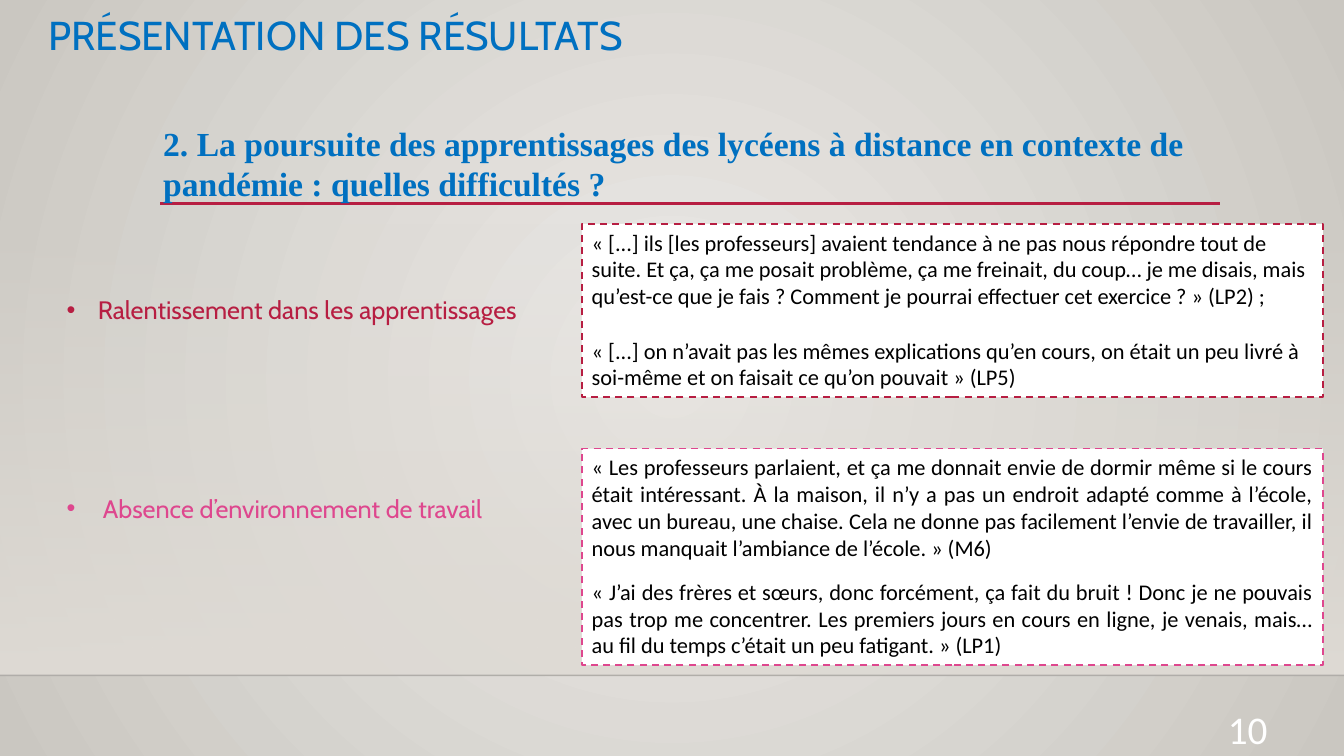
from lxml import etree
from pptx import Presentation
from pptx.dml.color import RGBColor
from pptx.enum.dml import MSO_LINE
from pptx.enum.shapes import MSO_CONNECTOR, MSO_SHAPE
from pptx.enum.text import MSO_ANCHOR, MSO_AUTO_SIZE, PP_ALIGN
from pptx.oxml import parse_xml
from pptx.oxml.ns import qn
from pptx.util import Inches, Pt

LEFT, RIGHT, JUST = PP_ALIGN.LEFT, PP_ALIGN.RIGHT, PP_ALIGN.JUSTIFY
TOP, NONE, DASH = MSO_ANCHOR.TOP, MSO_AUTO_SIZE.NONE, MSO_LINE.DASH
RECT, STRAIGHT = MSO_SHAPE.RECTANGLE, MSO_CONNECTOR.STRAIGHT

BLUE = RGBColor(0x00, 0x70, 0xC0)
RED = RGBColor(0xB7, 0x1E, 0x42)
PINK = RGBColor(0xDE, 0x47, 0x8E)
WHITE = RGBColor(0xFF, 0xFF, 0xFF)
BLACK = RGBColor(0, 0, 0)
INK = RGBColor(0, 0, 1)
PALE = RGBColor(0xEC, 0xEA, 0xE7)
GREY = RGBColor(0xCA, 0xC7, 0xC1)
SAND = RGBColor(0xDF, 0xDB, 0xD5)

# Content
TITLE = "PRÉSENTATION DES RÉSULTATS"
HEAD = ("2. La poursuite des apprentissages des lycéens à distance en contexte "
        "de pandémie : quelles difficultés ?")
PAGE = "10"
# Each theme: label, colour, label top, label indent,
# quote top, quote height, alignment, paragraph gap, quotes
THEMES = [
    ("Ralentissement dans les apprentissages", RED, 2.87, 0.31,
     2.22, 1.72, LEFT, 19.5, [
         "« [...] ils [les professeurs] avaient tendance à ne pas nous répondre "
         "tout de suite. Et ça, ça me posait problème, ça me freinait, du coup… "
         "je me disais, mais qu’est-ce que je fais ? Comment je pourrai "
         "effectuer cet exercice ? » (LP2) ;",
         "« [...] on n’avait pas les mêmes explications qu’en cours, on était un "
         "peu livré à soi-même et on faisait ce qu’on pouvait » (LP5)"]),
    ("Absence d’environnement de travail", PINK, 4.84, 0.36,
     4.45, 2.15, JUST, 12, [
         "« Les professeurs parlaient, et ça me donnait envie de dormir même si "
         "le cours était intéressant. À la maison, il n’y a pas un endroit "
         "adapté comme à l’école, avec un bureau, une chaise. Cela ne donne pas "
         "facilement l’envie de travailler, il nous manquait l’ambiance de "
         "l’école. » (M6)",
         "« J’ai des frères et sœurs, donc forcément, ça fait du bruit ! Donc "
         "je ne pouvais pas trop me concentrer. Les premiers jours en cours en "
         "ligne, je venais, mais… au fil du temps c’était un peu fatigant. » "
         "(LP1)"]),
]

# Layout in inches
WIDE, HIGH = 13.33, 7.5
FLOOR, BAND = 6.7, 2.21
LABEL_X, LABEL_W, LABEL_H = 0.56, 5.03, 0.4
QUOTE_X, QUOTE_W = 5.77, 7.35

deck = Presentation()
deck.slide_width, deck.slide_height = Inches(WIDE), Inches(HIGH)
slide = deck.slides.add_slide(deck.slide_layouts[3])
shapes = slide.shapes


def place(shape, x, y, w, h):
    shape.left, shape.top = Inches(x), Inches(y)
    shape.width, shape.height = Inches(w), Inches(h)


def write(shape, texts, font, size, color, align=LEFT, gap=0, bold=False):
    frame = shape.text_frame
    frame.word_wrap, frame.auto_size = True, NONE
    frame.vertical_anchor = TOP
    for i, text in enumerate(texts):
        para = frame.add_paragraph() if i else frame.paragraphs[0]
        para.alignment = align
        para.space_before = Pt(gap if i else 0)
        run = para.add_run()
        run.text = text
        run.font.name, run.font.size = font, Pt(size)
        run.font.bold, run.font.color.rgb = bold, color
    return frame.paragraphs[0]


def bullet(para, indent):
    props = para._p.get_or_add_pPr()
    props.set("marL", str(Inches(indent)))
    props.set("indent", str(-Inches(indent)))
    etree.SubElement(props, qn("a:buFont")).set("typeface", "Arial")
    etree.SubElement(props, qn("a:buChar")).set("char", "•")


def blend(fill, first, last):
    fill.gradient()
    for stop, color in zip(fill.gradient_stops, (first, last)):
        stop.color.rgb = color


def rule(x, y, end, color, width):
    line = shapes.add_connector(
        STRAIGHT, Inches(x), Inches(y), Inches(end), Inches(y))
    line.line.color.rgb, line.line.width = color, Pt(width)
    etree.SubElement(line._element.spPr, qn("a:effectLst"))
    return line


def fade(part, share):
    tint = next(part.iter(qn("a:srgbClr")))
    etree.SubElement(tint, qn("a:alpha")).set("val", str(share * 1000))


# Radial background
blend(slide.background.fill, PALE, GREY)
lin = next(slide.background._cSld.iter(qn("a:lin")))
lin.getparent().replace(lin, parse_xml(
    '<a:path xmlns:a="http://schemas.openxmlformats.org/drawingml/2006/main" '
    'path="circle"><a:fillToRect l="50000" t="50000" r="50000" b="50000"/>'
    '</a:path>'))

# Band that fades in towards the floor line, behind everything
band = shapes.add_shape(RECT, 0, Inches(BAND), Inches(WIDE), Inches(FLOOR - BAND))
band.shadow.inherit = False
band.line.fill.background()
blend(band.fill, SAND, SAND)
band.fill.gradient_angle = 270
fade(band._element.spPr, 0)
shapes._spTree.insert(2, band._element)

# Rules
fade(rule(0, FLOOR, WIDE, INK, 1)._element.spPr, 20)
rule(1.59, 2.02, 12.1, RED, 2.5)

# Title, heading and page number
title, *labels = slide.placeholders
place(title, 0.38, 0.11, 10.5, 0.62)
write(title, [TITLE], "Cabin", 28.8, BLUE).line_spacing = 0.9
head = shapes.add_textbox(0, 0, 0, 0)
place(head, 1.52, 1.17, 10.98, 0.91)
write(head, [HEAD], "Times New Roman", 24, BLUE, bold=True)
page = shapes.add_textbox(0, 0, 0, 0)
place(page, 9.56, 6.95, 3.11, 0.4)
write(page, [PAGE], "Calibri", 28, WHITE, RIGHT)

# Themes: bullet label on the left, quotes on the right
for label, theme in zip(labels, THEMES):
    name, color, y, indent, top, height, align, gap, quotes = theme
    place(label, LABEL_X, y, LABEL_W, LABEL_H)
    bullet(write(label, [name], "Cabin", 18, color), indent)

    box = shapes.add_shape(RECT, 0, 0, 0, 0)
    place(box, QUOTE_X, top, QUOTE_W, height)
    box.shadow.inherit = False
    box.fill.solid()
    box.fill.fore_color.rgb = WHITE
    box.line.color.rgb, box.line.width = color, Pt(1.25)
    box.line.dash_style = DASH
    write(box, quotes, "Calibri", 16, BLACK, align, gap)

deck.save("out.pptx")
